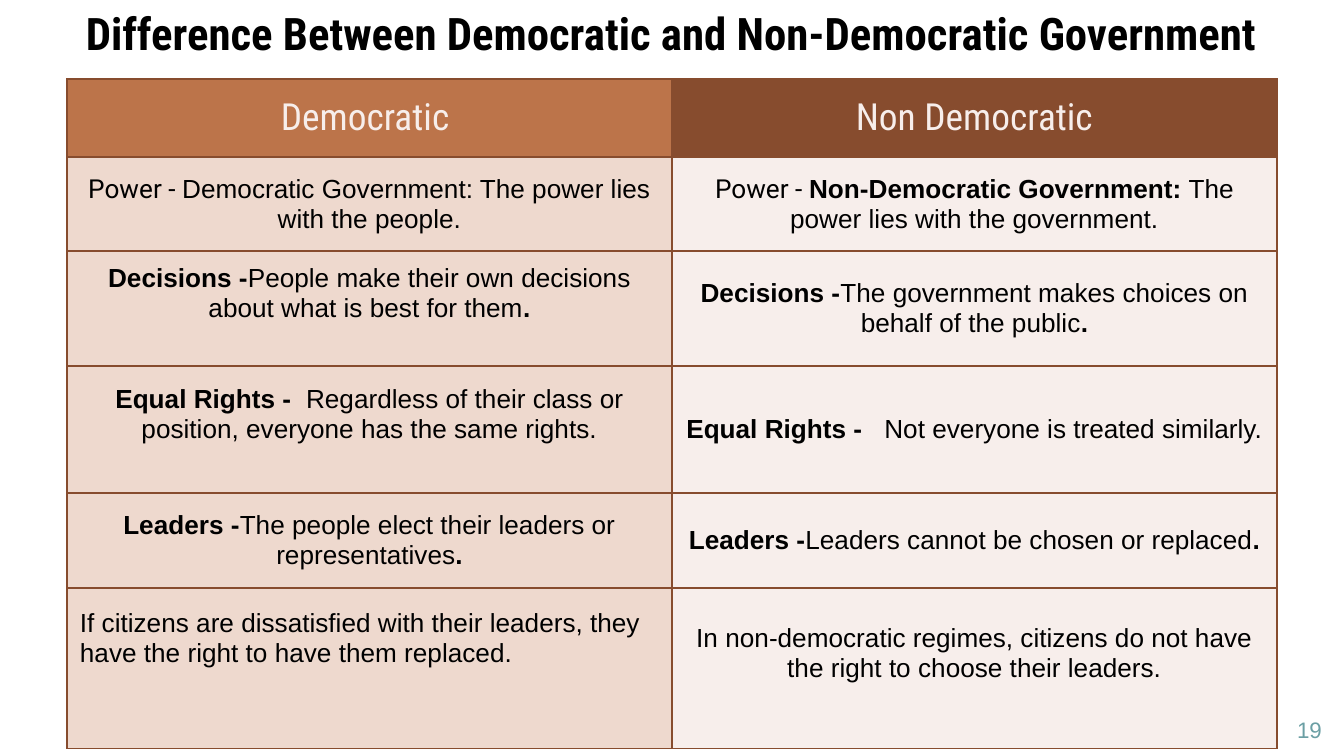
from dataclasses import dataclass

from lxml.etree import SubElement
from pptx import Presentation
from pptx.dml.color import RGBColor
from pptx.enum.text import MSO_ANCHOR, PP_ALIGN
from pptx.oxml.ns import qn
from pptx.util import Pt

EMU_PER_PX = 914400 / 134.4


def px(length):
    """Turn whole px into EMU."""
    return round(length * EMU_PER_PX)


@dataclass(frozen=True)
class Theme:
    """Colours, fonts and type sizes of the slide."""
    ink: str = "000000"
    rule: str = "874C2E"
    page: str = "6B9FA4"
    header_ink: str = "F7EEEB"
    header_fills: tuple = ("BC744A", "874C2E")
    body_fills: tuple = ("EED9CE", "F7EEEB")
    display: str = "Roboto Condensed"
    label: str = "Roboto"
    text: str = "Arial"
    title_size: int = 24
    header_size: int = 20
    body_size: int = 14
    page_size: int = 12
    rule_width: float = 0.75
    inset: int = 13
    line: int = 30


class Deck:
    """Hold the theme and the current slide."""

    def __init__(self, theme, width, height):
        """Open a blank slide of the given size."""
        self.theme = theme
        self.file = Presentation()
        self.file.slide_width, self.file.slide_height = px(width), px(height)
        self.slide = self.file.slides.add_slide(self.file.slide_layouts[6])

    def apply(self, target, formats):
        """Set every format value on the target."""
        for name, value in formats.items():
            setattr(target, name, value)

    def add_runs(self, frame, runs, size, color, align=PP_ALIGN.CENTER):
        """Fill the first paragraph with (text, font, bold) runs."""
        paragraph = frame.paragraphs[0]
        paragraph.alignment = align
        for words, face, bold in runs:
            run = paragraph.add_run()
            run.text = words
            self.apply(run.font, {"name": face, "size": Pt(size), "bold": bold})
            run.font.color.rgb = RGBColor.from_string(color)

    def text(self, box, runs, size, color, top_inset):
        """Add a wrapped, centred text box."""
        frame = self.slide.shapes.add_textbox(*map(px, box)).text_frame
        side = px(self.theme.inset)
        self.apply(frame, {
            "word_wrap": True, "vertical_anchor": MSO_ANCHOR.TOP,
            "margin_left": side, "margin_right": side,
            "margin_top": px(top_inset), "margin_bottom": side})
        self.add_runs(frame, runs, size, color)

    def border(self, cell):
        """Rule all four sides of a cell ahead of its fill."""
        properties = cell._tc.get_or_add_tcPr()
        for side in ("a:lnL", "a:lnR", "a:lnT", "a:lnB"):
            line = SubElement(properties, qn(side), w=str(Pt(self.theme.rule_width)))
            fill = SubElement(line, qn("a:solidFill"))
            SubElement(fill, qn("a:srgbClr"), val=self.theme.rule)

    def cell(self, cell, runs, fill, size, color, align, lift):
        """Style one cell, lifting its text by half lines."""
        inset = px(self.theme.inset)
        self.border(cell)
        cell.fill.solid()
        cell.fill.fore_color.rgb = RGBColor.from_string(fill)
        self.apply(cell, {
            "vertical_anchor": MSO_ANCHOR.MIDDLE,
            "margin_left": inset, "margin_right": inset, "margin_top": inset,
            "margin_bottom": inset + px(lift * self.theme.line)})
        self.add_runs(cell.text_frame, runs, size, color, align)

    def table(self, left, top, column_width, heights, rows, lifts, aligns):
        """Add the comparison table with its header row."""
        theme = self.theme
        columns = len(rows[0])
        table = self.slide.shapes.add_table(
            len(rows), columns, px(left), px(top),
            px(column_width * columns), px(sum(heights))).table
        self.apply(table, {"first_row": False, "horz_banding": False})
        for column in table.columns:
            column.width = px(column_width)
        for r, (height, row) in enumerate(zip(heights, rows)):
            table.rows[r].height = px(height)
            fills, size, color = (
                (theme.body_fills, theme.body_size, theme.ink) if r else
                (theme.header_fills, theme.header_size, theme.header_ink))
            for c, runs in enumerate(row):
                self.cell(table.cell(r, c), runs, fills[c], size, color,
                          aligns.get((r, c), PP_ALIGN.CENTER), lifts.get((r, c), 0))


def main():
    """Build and save the slide."""
    theme = Theme()
    deck = Deck(theme, 1344, 756)

    def plain(words):
        """Return a regular body run."""
        return words, theme.text, False

    def strong(words):
        """Return a bold body run."""
        return words, theme.text, True

    power = ("Power - ", theme.label, False)
    decisions, rights, leaders = map(
        strong, ("Decisions -", "Equal Rights - ", "Leaders -"))
    stop = strong(".")
    comparison = [
        [[("Democratic ", theme.display, False)],
         [("Non Democratic", theme.display, False)]],
        [[power, plain("Democratic Government: The power lies with the people.")],
         [power, strong("Non-Democratic Government:"),
          plain(" The power lies with the government.")]],
        [[decisions, plain("People make their own decisions about what is best for them"), stop],
         [decisions, plain("The government makes choices on behalf of the public"), stop]],
        [[rights, plain(" Regardless of their class or position, everyone has the same rights.")],
         [rights, plain("  Not everyone is treated similarly.")]],
        [[leaders, plain("The people elect their leaders or representatives"), stop],
         [leaders, plain("Leaders cannot be chosen or replaced"), stop]],
        [[plain("If citizens are dissatisfied with their leaders, "
                "they have the right to have them replaced.")],
         [plain("In non-democratic regimes, citizens do not have "
                "the right to choose their leaders.")]],
    ]
    deck.table(67, 79, 605, (78, 94, 115, 127, 95, 161), comparison,
               lifts={(2, 0): 1, (3, 0): 1, (5, 0): 2, (5, 1): 1},
               aligns={(5, 0): PP_ALIGN.LEFT})
    deck.text((66, 6, 1210, 112),
              [("Difference Between Democratic and Non-Democratic Government",
                theme.display, True)],
              theme.title_size, theme.ink, 0)
    deck.text((1275, 703, 69, 46), [plain("19")],
              theme.page_size, theme.page, theme.inset)
    deck.file.save("out.pptx")


if __name__ == "__main__":
    main()
